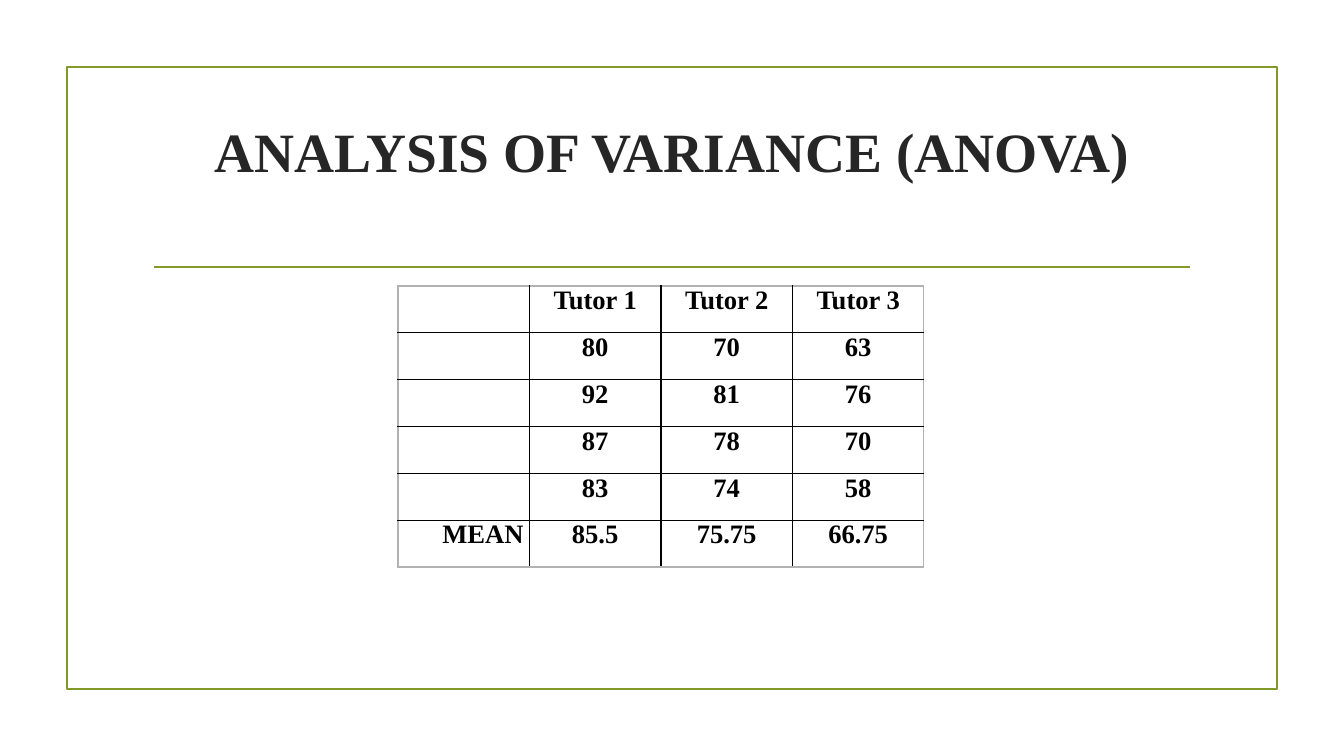
from lxml import etree
from pptx import Presentation
from pptx.dml.color import RGBColor
from pptx.enum.shapes import MSO_CONNECTOR, MSO_SHAPE
from pptx.enum.text import MSO_ANCHOR, PP_ALIGN
from pptx.oxml.ns import qn
from pptx.util import Pt

EMU_PER_PX = 914400 / 100.8
OLIVE = RGBColor(0x83, 0x99, 0x2A)
CHARCOAL = RGBColor(0x26, 0x26, 0x26)
BLACK = RGBColor(0, 0, 0)
GRAY = RGBColor(0xB2, 0xB2, 0xB2)
FONT = "Times New Roman"
CENTER, RIGHT = PP_ALIGN.CENTER, PP_ALIGN.RIGHT
TOP, MIDDLE = MSO_ANCHOR.TOP, MSO_ANCHOR.MIDDLE
RECTANGLE, STRAIGHT = MSO_SHAPE.RECTANGLE, MSO_CONNECTOR.STRAIGHT
TITLE_ONLY = 5

SCORES = [
    ["", "Tutor 1", "Tutor 2", "Tutor 3"],
    ["", "80", "70", "63"],
    ["", "92", "81", "76"],
    ["", "87", "78", "70"],
    ["", "83", "74", "58"],
    ["MEAN", "85.5", "75.75", "66.75"],
]


def px(length):
    """Turn pixels into EMU."""
    return round(length * EMU_PER_PX)


def write(frame, text, size, color=BLACK, align=CENTER):
    """Put bold text into a text frame."""
    paragraph = frame.paragraphs[0]
    paragraph.alignment = align
    run = paragraph.add_run()
    run.text = text
    run.font.name = FONT
    run.font.size = Pt(size)
    run.font.bold = True
    run.font.color.rgb = color


def add_frame(slide, left, top, width, height):
    """Draw the olive border and the rule under the heading."""
    border = slide.shapes.add_shape(RECTANGLE, px(left), px(top), px(width), px(height))
    border.shadow.inherit = False
    border.fill.background()
    rule_y = px(top + 200)
    rule = slide.shapes.add_connector(
        STRAIGHT, px(left + 87), rule_y, px(left + width - 87), rule_y)
    etree.SubElement(rule._element.spPr, qn("a:effectLst"))
    for outline in (border.line, rule.line):
        outline.color.rgb = OLIVE
        outline.width = Pt(1.25)


def add_heading(slide, left, top, width, height):
    """Place the title in the upper part of its box."""
    heading = slide.shapes.title
    heading.left, heading.top = px(left), px(top)
    heading.width, heading.height = px(width), px(height)
    frame = heading.text_frame
    frame.word_wrap = True
    frame.vertical_anchor = MIDDLE
    frame.margin_top, frame.margin_bottom = px(5), px(65)
    write(frame, "ANALYSIS OF VARIANCE (ANOVA)", 39.6, color=CHARCOAL)


def set_border(cell, side, color, width):
    """Give one side of a cell a solid line."""
    line = etree.SubElement(cell._tc.get_or_add_tcPr(), qn(f"a:ln{side}"), w=str(Pt(width)))
    fill = etree.SubElement(line, qn("a:solidFill"))
    etree.SubElement(fill, qn("a:srgbClr"), val=str(color))


def add_scores(slide, left, top, width, height):
    """Build the table of tutor scores with equal rows and columns."""
    row_count, column_count = len(SCORES), len(SCORES[0])
    table = slide.shapes.add_table(
        row_count, column_count, px(left), px(top), px(width), px(height)).table
    table.first_row = table.horz_banding = False
    for column in table.columns:
        column.width = px(width / column_count)
    for r, scores in enumerate(SCORES):
        table.rows[r].height = px(height / row_count)
        for c, score in enumerate(scores):
            cell = table.cell(r, c)
            cell.margin_left = cell.margin_right = px(6)
            cell.margin_top = cell.margin_bottom = 0
            cell.vertical_anchor = TOP
            outer_sides = {"L": c == 0, "R": c == column_count - 1,
                           "T": r == 0, "B": r == row_count - 1}
            for side, is_outer in outer_sides.items():
                set_border(cell, side, GRAY if is_outer else BLACK, 1)
            cell.fill.background()
            if score:
                write(cell.text_frame, score, 19, align=CENTER if c else RIGHT)


def main():
    """Build and save the slide."""
    deck = Presentation()
    deck.slide_width, deck.slide_height = px(1344), px(756)
    slide = deck.slides.add_slide(deck.slide_layouts[TITLE_ONLY])
    add_frame(slide, 67, 67, 1210, 622)
    add_heading(slide, 143, 108, 1058, 144)
    add_scores(slide, 398, 286, 526, 281)
    deck.save("out.pptx")


if __name__ == "__main__":
    main()
